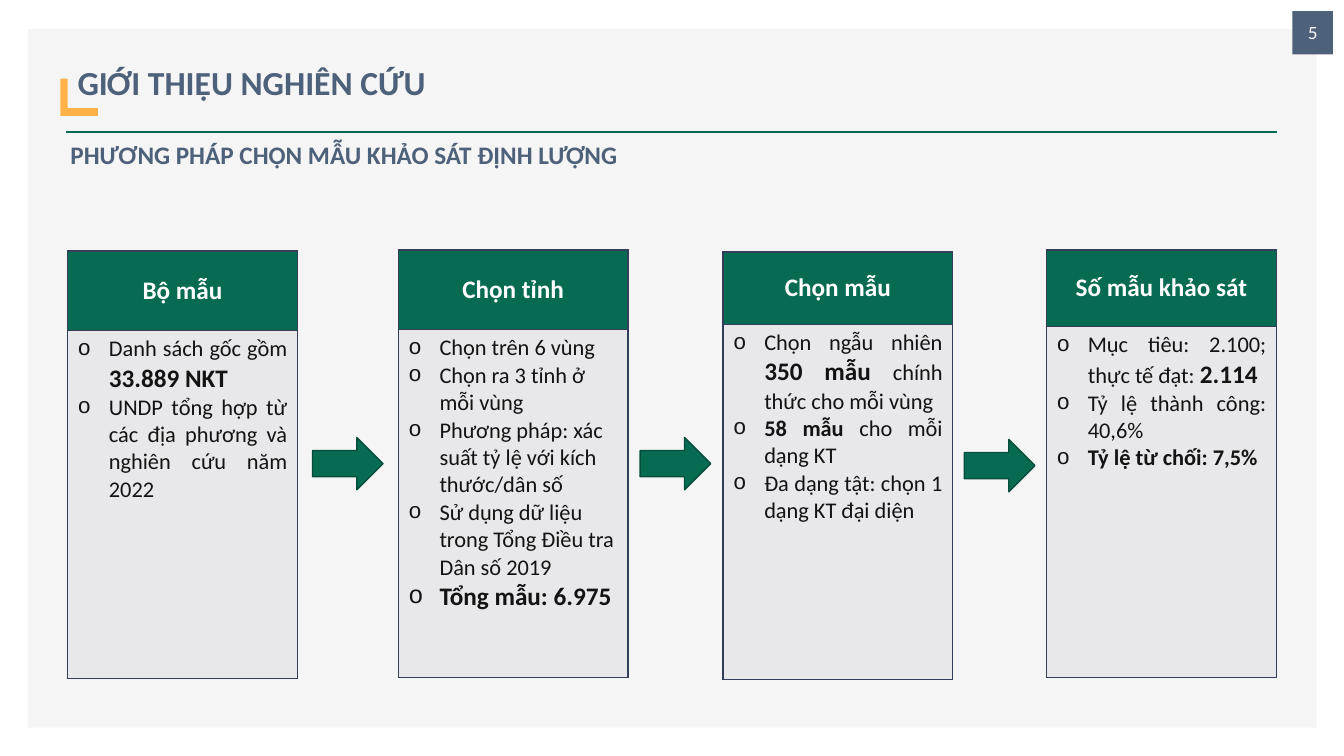
"""Build the slide on the sampling method of the quantitative survey."""
from dataclasses import dataclass

import lxml.etree
import pptx
import pptx.dml.color
import pptx.enum.shapes
import pptx.enum.text
import pptx.oxml
import pptx.oxml.ns
import pptx.util

ALIGN = pptx.enum.text.PP_ALIGN
ANCHOR = pptx.enum.text.MSO_ANCHOR
SHAPE = pptx.enum.shapes.MSO_SHAPE
WIDTH, HEIGHT = pptx.util.Inches(13.33), pptx.util.Inches(7.5)


@dataclass(frozen=True)
class Theme:
    font: str = "Calibri"
    number_font: str = "Lato"
    bullet_font: str = "Courier New"
    white: str = "FFFFFF"
    panel: str = "F5F5F5"
    slate: str = "4E617A"
    amber: str = "FDB347"
    green: str = "076B51"
    dark_green: str = "054E3B"
    border: str = "343D5A"
    body_fill: str = "E8E8EA"
    ink: str = "131313"
    title_size: int = 24
    heading_size: int = 18
    body_size: int = 16
    number_size: int = 12


@dataclass(frozen=True)
class Area:
    """Hold a rectangle in percent of the slide's width and height."""
    left: float
    top: float
    width: float
    height: float

    def lengths(self) -> tuple[int, int, int, int]:
        return across(self.left), down(self.top), across(self.width), down(self.height)


@dataclass(frozen=True)
class Span:
    text: str
    bold: bool = False
    size: int = Theme.body_size


@dataclass(frozen=True)
class Step:
    heading: str
    left: float
    top: float
    header_height: float
    align: ALIGN
    bullets: tuple[tuple[Span, ...], ...]


THEME = Theme()
STEP_WIDTH, STEP_HEIGHT = 17.1, 56.53
ARROW_WIDTH, ARROW_HEIGHT = 5.25, 6.93
ARROW_TOPS = (57.87, 57.87, 58.13)
BIG = THEME.heading_size

STEPS = (
    Step("Bộ mẫu", 5.03, 33.2, 10.53, ALIGN.JUSTIFY, (
        (Span("Danh sách gốc gồm "), Span("33.889 NKT", True, BIG)),
        (Span("UNDP tổng hợp từ các địa phương và nghiên cứu năm 2022"),),
    )),
    Step("Chọn tỉnh", 29.63, 33.07, 10.53, ALIGN.LEFT, (
        (Span("Chọn trên 6 vùng"),),
        (Span("Chọn ra 3 tỉnh ở mỗi vùng"),),
        (Span("Phương pháp: xác suất tỷ lệ với kích thước/dân số"),),
        (Span("Sử dụng dữ liệu trong Tổng Điều tra Dân số 2019"),),
        (Span("Tổng mẫu: 6.975", True, BIG),),
    )),
    Step("Chọn mẫu", 53.79, 33.33, 9.6, ALIGN.JUSTIFY, (
        (Span("Chọn ngẫu nhiên "), Span("350 mẫu ", True, BIG),
         Span("chính thức cho mỗi vùng")),
        (Span("58 mẫu ", True), Span("cho mỗi dạng KT")),
        (Span("Đa dạng tật: chọn 1 dạng KT đại diện"),),
    )),
    Step("Số mẫu khảo sát", 77.87, 33.07, 10.13, ALIGN.JUSTIFY, (
        (Span("Mục tiêu: 2.100; thực tế đạt: "), Span("2.114", True, BIG)),
        (Span("Tỷ lệ thành công: 40,6%"),),
        (Span("Tỷ lệ từ chối: 7,5%", True),),
    )),
)


def across(percent: float) -> int:
    return round(WIDTH * percent / 100)


def down(percent: float) -> int:
    return round(HEIGHT * percent / 100)


def rgb(colour: str) -> pptx.dml.color.RGBColor:
    return pptx.dml.color.RGBColor.from_string(colour)


def add_child(parent, tag: str, **attributes: str):
    return lxml.etree.SubElement(parent, pptx.oxml.ns.qn(tag), attributes)


def style(para, size: int, colour: str, bold: bool = False,
          font: str = THEME.font, align: ALIGN = ALIGN.LEFT) -> None:
    para.alignment = align
    para.font.name = font
    para.font.size = pptx.util.Pt(size)
    para.font.bold = bold
    para.font.color.rgb = rgb(colour)


def draw_shape(page, area: Area, fill: str, kind: SHAPE = SHAPE.RECTANGLE, line: str = ""):
    shape = page.shapes.add_shape(kind, *area.lengths())
    shape.shadow.inherit = False
    shape.fill.solid()
    shape.fill.fore_color.rgb = rgb(fill)
    if line:
        shape.line.color.rgb = rgb(line)
        shape.line.width = pptx.util.Pt(1)
    else:
        shape.line.fill.background()
    return shape


def write(box, text: str, anchor: ANCHOR):
    frame = box.text_frame
    frame.word_wrap = True
    frame.vertical_anchor = anchor
    para = frame.paragraphs[0]
    para.add_run().text = text
    return para


def draw_frame(page) -> None:
    draw_shape(page, Area(2.1, 3.87, 95.87, 92.4), THEME.panel)
    rule = page.shapes.add_connector(
        pptx.enum.shapes.MSO_CONNECTOR.STRAIGHT,
        across(4.95), down(17.47), across(95.05), down(17.47))
    rule.line.color.rgb = rgb(THEME.green)
    rule.line.width = pptx.util.Pt(2)
    add_child(rule.element.spPr, "a:effectLst")
    number = draw_shape(page, Area(96.17, 1.47, 3, 5.73), THEME.slate)
    style(write(number, "5", ANCHOR.MIDDLE), THEME.number_size, THEME.white,
          font=THEME.number_font, align=ALIGN.CENTER)


def draw_titles(page) -> None:
    draw_shape(page, Area(4.5, 10.4, 2.78, 4.93), THEME.amber)
    title = draw_shape(page, Area(5.03, 4.8, 67.52, 9.47), THEME.panel)
    para = write(title, "GIỚI THIỆU NGHIÊN CỨU", ANCHOR.MIDDLE)
    para.line_spacing = 1.5
    style(para, THEME.title_size, THEME.slate, bold=True)
    subtitle = page.shapes.add_textbox(*Area(4.5, 17.73, 68.1, 9.47).lengths())
    para = write(subtitle, "PHƯƠNG PHÁP CHỌN MẪU KHẢO SÁT ĐỊNH LƯỢNG", ANCHOR.TOP)
    style(para, THEME.heading_size, THEME.slate, bold=True, align=ALIGN.JUSTIFY)


def paint_cell(cell, fill: str) -> None:
    properties = cell._tc.get_or_add_tcPr()
    for side in ("L", "R", "T", "B"):
        edge = add_child(properties, f"a:ln{side}", w=str(pptx.util.Pt(1)))
        add_child(add_child(edge, "a:solidFill"), "a:srgbClr", val=THEME.border)
    cell.fill.solid()
    cell.fill.fore_color.rgb = rgb(fill)


def write_bullet(para, spans: tuple[Span, ...], align: ALIGN) -> None:
    indent = pptx.util.Inches(0.31)
    properties = para._p.get_or_add_pPr()
    properties.set("marL", str(indent))
    properties.set("indent", str(-indent))
    add_child(add_child(properties, "a:buClr"), "a:srgbClr", val=THEME.ink)
    add_child(properties, "a:buFont", typeface=THEME.bullet_font)
    add_child(properties, "a:buChar", char="o")
    first = spans[0]
    style(para, first.size, THEME.ink, first.bold, align=align)
    for span in spans:
        run = para.add_run()
        run.text = span.text
        if len(spans) > 1:
            run.font.size = pptx.util.Pt(span.size)
            run.font.bold = span.bold


def draw_step(page, step: Step) -> None:
    area = Area(step.left, step.top, STEP_WIDTH, STEP_HEIGHT)
    table = page.shapes.add_table(2, 1, *area.lengths()).table
    table.rows[0].height = down(step.header_height)
    table.rows[1].height = down(STEP_HEIGHT - step.header_height)
    header, body = table.cell(0, 0), table.cell(1, 0)
    paint_cell(header, THEME.green)
    paint_cell(body, THEME.body_fill)
    header.vertical_anchor = ANCHOR.MIDDLE
    para = header.text_frame.paragraphs[0]
    para.add_run().text = step.heading
    style(para, THEME.heading_size, THEME.white, bold=True, align=ALIGN.CENTER)
    frame = body.text_frame
    for index, spans in enumerate(step.bullets):
        para = frame.add_paragraph() if index else frame.paragraphs[0]
        write_bullet(para, spans, step.align)


def draw_arrow(page, before: Step, after: Step, top: float) -> None:
    middle = (before.left + STEP_WIDTH + after.left) / 2
    area = Area(middle - ARROW_WIDTH / 2, top, ARROW_WIDTH, ARROW_HEIGHT)
    draw_shape(page, area, THEME.green, SHAPE.RIGHT_ARROW, THEME.dark_green)


def main() -> None:
    deck = pptx.Presentation()
    deck.slide_width, deck.slide_height = WIDTH, HEIGHT
    page = deck.slides.add_slide(deck.slide_layouts[6])
    draw_frame(page)
    draw_titles(page)
    for step in STEPS:
        draw_step(page, step)
    for before, after, top in zip(STEPS, STEPS[1:], ARROW_TOPS):
        draw_arrow(page, before, after, top)
    deck.save("out.pptx")


if __name__ == "__main__":
    main()
